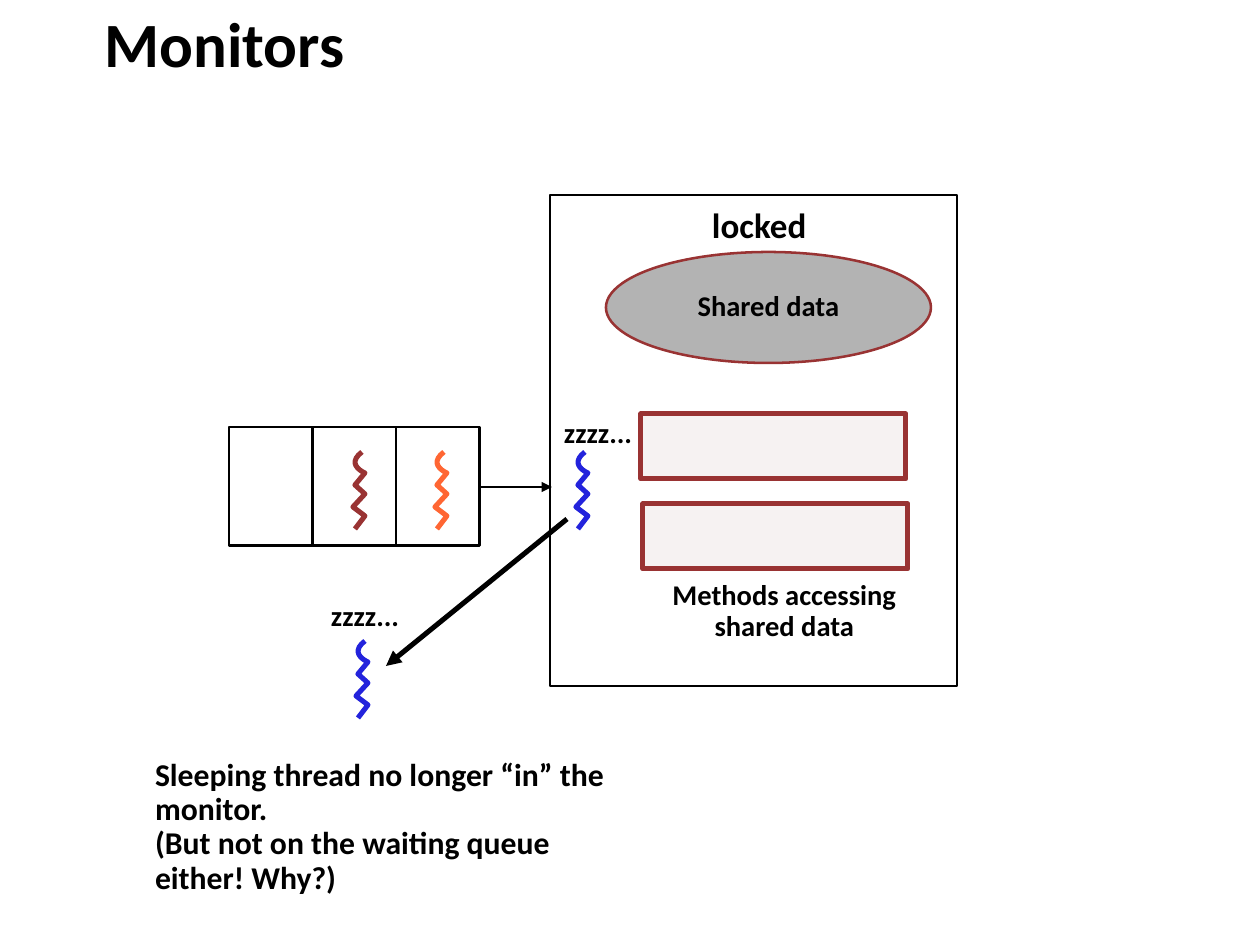
from lxml.etree import SubElement
from pptx import Presentation
from pptx.dml.color import RGBColor
from pptx.enum.shapes import MSO_CONNECTOR, MSO_SHAPE
from pptx.enum.text import MSO_ANCHOR, MSO_AUTO_SIZE, PP_ALIGN
from pptx.oxml.ns import qn
from pptx.util import Pt

SCALE = 914400 / 126  # EMU per px
INK = {"black": "000000", "red": "993333", "orange": "FF6633",
       "blue": "2323DC", "gray": "B3B3B3", "pale": "F6F2F2"}
THIN, THICK = 1.45, 2.89
LEFT, MID = PP_ALIGN.LEFT, PP_ALIGN.CENTER


def emu(*px):
    return [round(v * SCALE) for v in px]


class Board:
    font = "Calibri"

    def __init__(self, slide):
        self.slide = slide
        self.shapes = slide.shapes

    def color(self, name):
        return RGBColor.from_string(INK[name])

    def stroke(self, line, ink, width):
        line.color.rgb = self.color(ink)
        line.width = Pt(width)

    def words(self, frame, rows, size, align=LEFT, space=None):
        for i, row in enumerate(rows):
            para = frame.paragraphs[0] if i == 0 else frame.add_paragraph()
            para.alignment = align
            para.line_spacing = space
            run = para.add_run()
            run.text = row
            run.font.name = self.font
            run.font.size = Pt(size)
            run.font.bold = True
            run.font.color.rgb = self.color("black")

    def inset(self, frame, x, y):
        frame.margin_left = frame.margin_right = emu(x)[0]
        frame.margin_top = frame.margin_bottom = emu(y)[0]

    def title(self, text, *box):
        shape = self.shapes.title
        shape.left, shape.top, shape.width, shape.height = emu(*box)
        frame = shape.text_frame
        frame.auto_size = MSO_AUTO_SIZE.NONE
        frame.vertical_anchor = MSO_ANCHOR.MIDDLE
        self.words(frame, [text], 36)

    def label(self, rows, *box, size=16.3, align=LEFT):
        frame = self.shapes.add_textbox(*emu(*box)).text_frame
        frame.word_wrap = False
        self.inset(frame, 11, 5)
        self.words(frame, rows, size, align, 0.9)

    def paint(self, shape, fill, ink, width):
        shape.shadow.inherit = False
        if fill:
            shape.fill.solid()
            shape.fill.fore_color.rgb = self.color(fill)
        else:
            shape.fill.background()
        self.stroke(shape.line, ink, width)

    def rect(self, *box, fill=None, ink="black", width=THIN):
        shape = self.shapes.add_shape(MSO_SHAPE.ROUNDED_RECTANGLE, *emu(*box))
        shape.adjustments[0] = 0
        self.paint(shape, fill, ink, width)

    def oval(self, text, *box):
        shape = self.shapes.add_shape(MSO_SHAPE.OVAL, *emu(*box))
        self.paint(shape, "gray", "red", THIN)
        frame = shape.text_frame
        frame.vertical_anchor = MSO_ANCHOR.MIDDLE
        self.inset(frame, 1, 1)
        self.words(frame, [text], 16.3, MID, 0.9)

    def arrow(self, *ends, width=THIN):
        line = self.shapes.add_connector(MSO_CONNECTOR.STRAIGHT, *emu(*ends))
        self.stroke(line.line, "black", width)
        props = line._element.spPr
        SubElement(props.find(qn("a:ln")), qn("a:tailEnd"), type="triangle")
        SubElement(props, qn("a:effectLst"))

    def thread(self, x, y, ink):
        # Curved head (cubic Bezier), then a zigzag tail
        bend = [(17, 0), (0, 13), (20, 21), (20, 21)]
        points = []
        for t in (i / 12 for i in range(13)):
            mix = ((1 - t) ** 3, 3 * t * (1 - t) ** 2, 3 * t * t * (1 - t), t ** 3)
            points.append([sum(m * p[k] for m, p in zip(mix, bend)) for k in (0, 1)])
        points += [(10, 33), (20, 42), (8, 55), (20, 64), (10, 77)]
        spots = [emu(x + px, y + py) for px, py in points]
        outline = self.shapes.build_freeform(*spots[0])
        outline.add_line_segments(spots[1:], close=False)
        self.paint(outline.convert_to_shape(), None, ink, THICK)


def main():
    deck = Presentation()
    deck.slide_width, deck.slide_height = emu(1260, 945)
    board = Board(deck.slides.add_slide(deck.slide_layouts[5]))
    board.title("Monitors", 92, 13, 1076, 58)

    # Monitor with its data and methods
    board.oval("Shared data", 606, 252, 325, 111)
    for x, y in ((641, 414), (643, 504)):
        board.rect(x, y, 265, 65, fill="pale", ink="red", width=THICK)
    board.label(["Methods accessing", "shared data"], 651, 576, 267, 76, align=MID)
    board.rect(550, 195, 407, 491)
    board.label(["locked"], 701, 203, 149, 47, size=20)

    # Waiting queue
    for i in range(3):
        board.rect(229 + 83.5 * i, 427, 83.5, 118.5)
    board.arrow(479, 487, 552, 487)

    # Threads
    for x, y, ink in ((568, 452, "blue"), (427, 452, "orange"),
                      (345, 452, "red"), (348, 641, "blue")):
        board.thread(x, y, ink)
    for x, y in ((320, 597), (553, 414)):
        board.label(["zzzz..."], x, y, 103, 43)
    board.arrow(567, 519, 386, 666, width=THICK)

    # Remark
    board.label(["Sleeping thread no longer “in” the monitor.",
                 "(But not on the waiting queue either! Why?)"],
                144, 754, 496, 83, size=18.1)
    deck.save("out.pptx")


if __name__ == "__main__":
    main()
